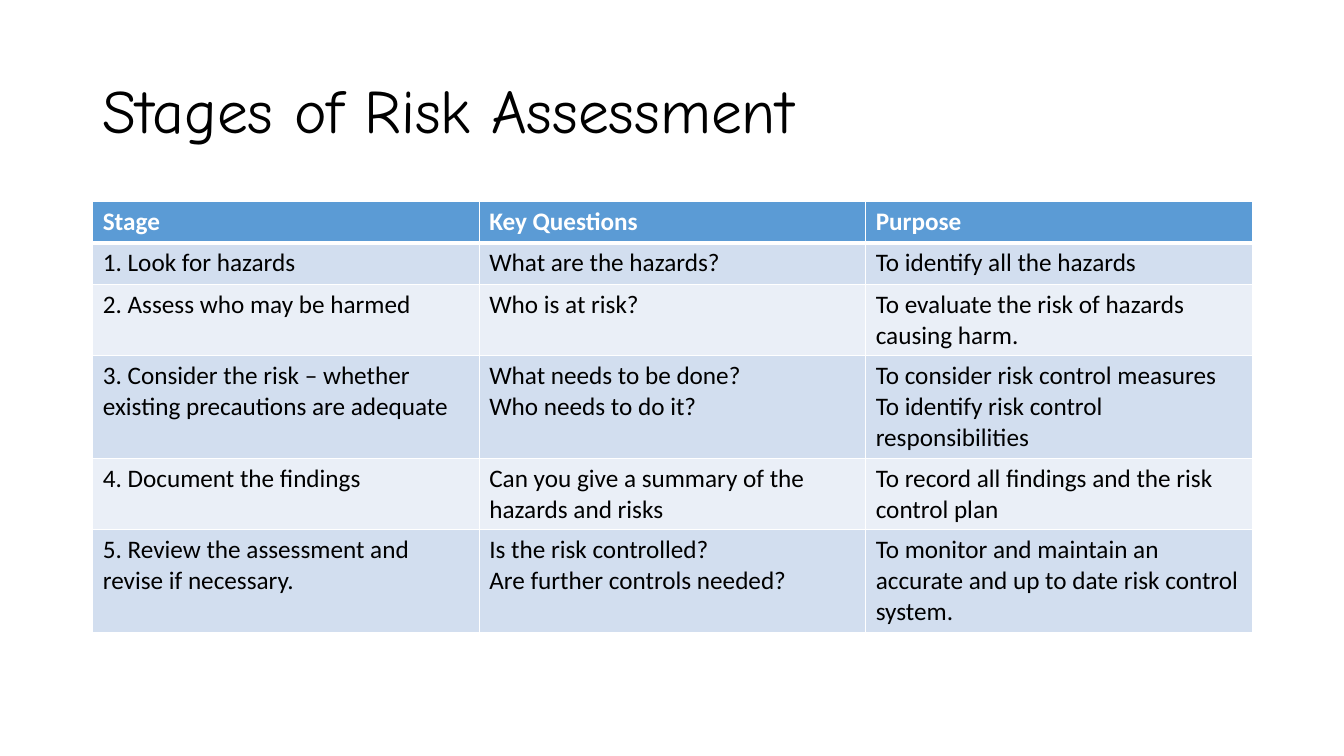
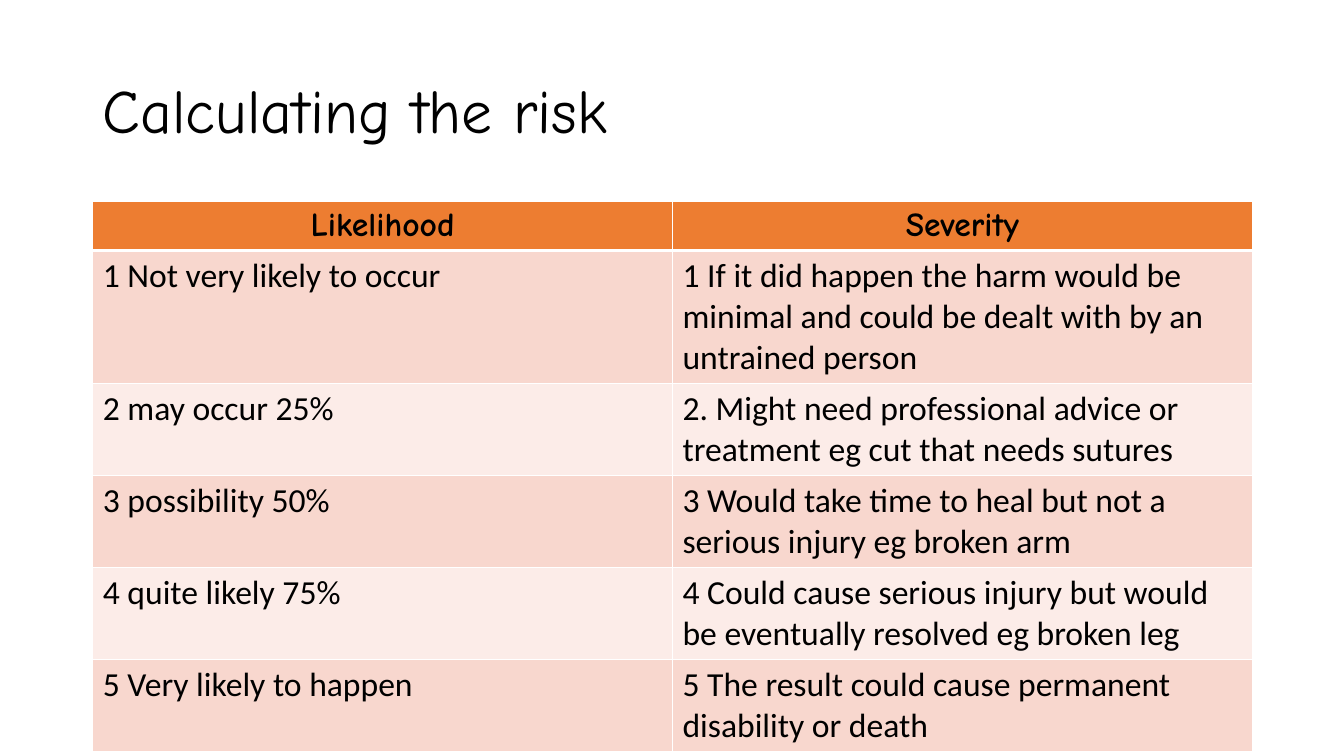
from dataclasses import dataclass

from lxml import etree
from pptx import Presentation
from pptx.dml.color import RGBColor
from pptx.enum import text
from pptx.oxml import ns
from pptx.util import Inches, Pt

BLACK = RGBColor(0x00, 0x00, 0x00)
WHITE = RGBColor(0xFF, 0xFF, 0xFF)
BLUE = RGBColor(0x5B, 0x9B, 0xD5)
BLUE_BAND = RGBColor(0xD2, 0xDE, 0xEF)
BLUE_PALE = RGBColor(0xEA, 0xEF, 0xF7)
ORANGE = RGBColor(0xED, 0x7D, 0x31)
ORANGE_BAND = RGBColor(0xF8, 0xD7, 0xCE)
ORANGE_PALE = RGBColor(0xFC, 0xEC, 0xE8)

TITLE_FONT = "Comic Neue"
BODY_FONT = "Calibri"
LEFT = Inches(0.92)
CONTENT_WIDTH = Inches(11.5)
TABLE_TOP = Inches(2)
ROW_HEIGHT = Inches(0.41)
THIN, THICK = 1, 3


@dataclass
class TableStyle:
    header_fill: RGBColor
    bands: tuple
    size: int
    header_color: RGBColor
    header_font: str
    header_align: text.PP_ALIGN


STAGES_STYLE = TableStyle(
    BLUE, (BLUE_BAND, BLUE_PALE), 18, WHITE, BODY_FONT, text.PP_ALIGN.LEFT
)
RISK_STYLE = TableStyle(
    ORANGE, (ORANGE_BAND, ORANGE_PALE), 24, BLACK, TITLE_FONT, text.PP_ALIGN.CENTER
)

STAGES = [
    ("Stage", "Key Questions", "Purpose"),
    ("1. Look for hazards", "What are the hazards?", "To identify all the hazards"),
    (
        "2. Assess who may be harmed",
        "Who is at risk?",
        "To evaluate the risk of hazards causing harm.",
    ),
    (
        "3. Consider the risk – whether existing precautions are adequate",
        "What needs to be done?\nWho needs to do it?",
        "To consider risk control measures\nTo identify risk control responsibilities",
    ),
    (
        "4. Document the findings",
        "Can you give a summary of the hazards and risks",
        "To record all findings and the risk control plan",
    ),
    (
        "5. Review the assessment and revise if necessary.",
        "Is the risk controlled?\nAre further controls needed?",
        "To monitor and maintain an accurate and up to date risk control system.",
    ),
]

RISK_SCORES = [
    ("Likelihood", "Severity"),
    (
        "1 Not very likely to occur",
        "1 If it did happen the harm would be minimal and could be dealt with "
        "by an untrained person",
    ),
    (
        "2 may occur 25%",
        "2. Might need professional advice or treatment eg cut that needs sutures",
    ),
    (
        "3 possibility 50%",
        "3 Would take time to heal but not a serious injury eg broken arm",
    ),
    (
        "4 quite likely 75%",
        "4 Could cause serious injury but would be eventually resolved eg broken leg",
    ),
    (
        "5 Very likely to happen",
        "5 The result could cause permanent disability or death",
    ),
]


def format_paragraph(paragraph, font_name, size, color, bold, align):
    paragraph.alignment = align
    font = paragraph.font
    font.name = font_name
    font.size = Pt(size)
    font.bold = bold
    font.color.rgb = color


def add_titled_slide(presentation, title_text):
    slide = presentation.slides.add_slide(presentation.slide_layouts[5])
    title = slide.shapes.title
    title.left, title.top = LEFT, Inches(0.4)
    title.width, title.height = CONTENT_WIDTH, Inches(1.45)
    title.text_frame.vertical_anchor = text.MSO_ANCHOR.MIDDLE
    title.text_frame.text = title_text
    paragraph = title.text_frame.paragraphs[0]
    paragraph.line_spacing = 0.9
    format_paragraph(paragraph, TITLE_FONT, 44, BLACK, False, text.PP_ALIGN.LEFT)
    return slide


def set_borders(cell, top, bottom):
    properties = cell._tc.get_or_add_tcPr()
    widths = {"a:lnL": THIN, "a:lnR": THIN, "a:lnT": top, "a:lnB": bottom}
    for tag, width in widths.items():
        line = etree.SubElement(properties, ns.qn(tag), w=str(Pt(width)))
        fill = etree.SubElement(line, ns.qn("a:solidFill"))
        etree.SubElement(fill, ns.qn("a:srgbClr"), val=str(WHITE))


def fill_cell(cell, content, row, style):
    is_header = row == 0
    set_borders(cell, THICK if row == 1 else THIN, THICK if is_header else THIN)
    cell.fill.solid()
    cell.fill.fore_color.rgb = (
        style.header_fill if is_header else style.bands[(row - 1) % 2]
    )
    cell.text = content
    for paragraph in cell.text_frame.paragraphs:
        format_paragraph(
            paragraph,
            style.header_font if is_header else BODY_FONT,
            style.size,
            style.header_color if is_header else BLACK,
            is_header,
            style.header_align if is_header else text.PP_ALIGN.LEFT,
        )


def add_banded_table(slide, rows, style):
    table = slide.shapes.add_table(
        len(rows), len(rows[0]), LEFT, TABLE_TOP, CONTENT_WIDTH, ROW_HEIGHT * len(rows)
    ).table
    for row, contents in enumerate(rows):
        for column, content in enumerate(contents):
            fill_cell(table.cell(row, column), content, row, style)


def main():
    presentation = Presentation()
    presentation.slide_width = Inches(13.33)
    presentation.slide_height = Inches(7.5)
    for title, rows, style in (
        ("Stages of Risk Assessment", STAGES, STAGES_STYLE),
        ("Calculating the risk", RISK_SCORES, RISK_STYLE),
    ):
        add_banded_table(add_titled_slide(presentation, title), rows, style)
    presentation.save("out.pptx")


if __name__ == "__main__":
    main()
